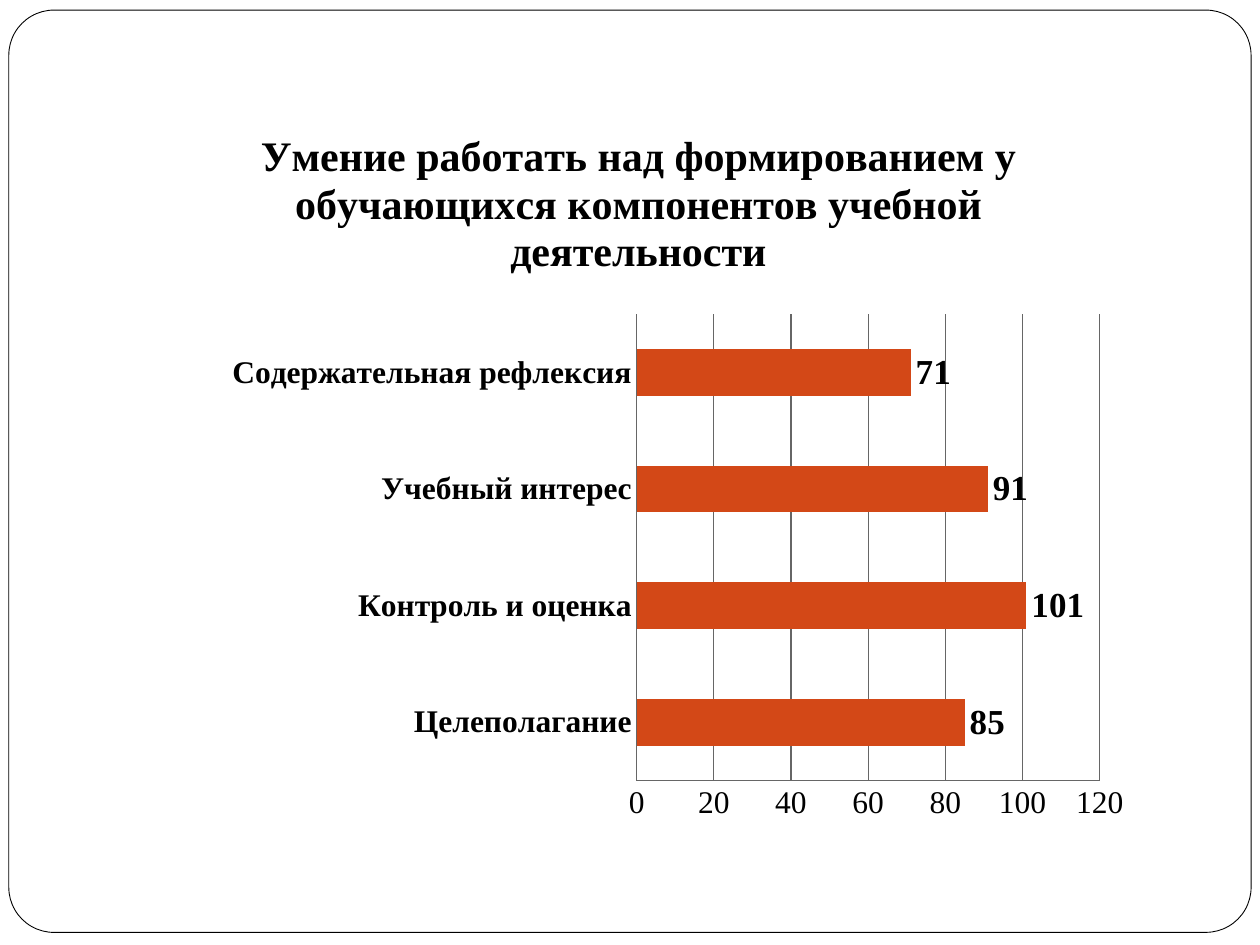
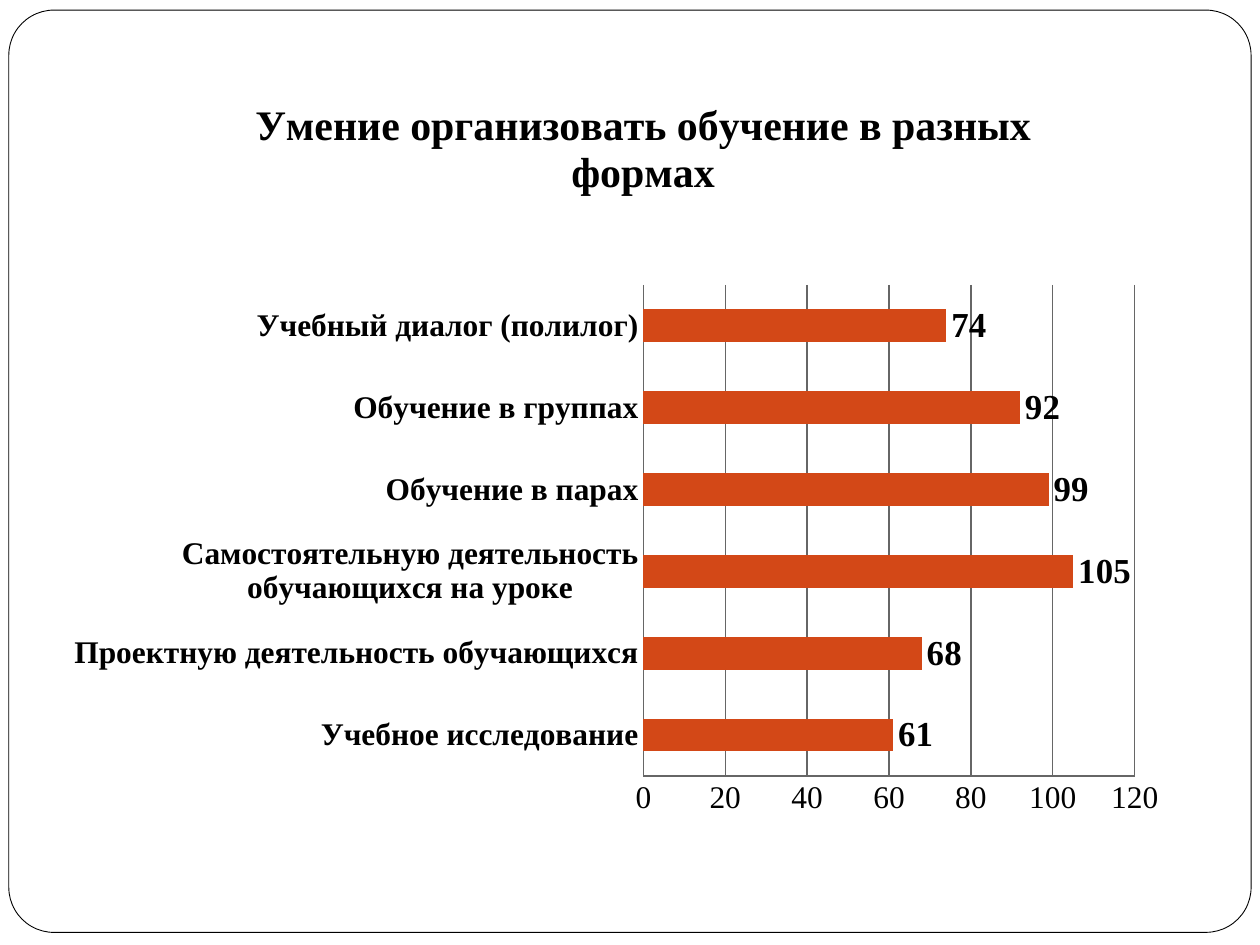
from pptx import Presentation
from pptx.chart.data import CategoryChartData as ChartData
from pptx.dml.color import RGBColor
from pptx.enum.chart import XL_CHART_TYPE as Kind, XL_LABEL_POSITION as Spot
from pptx.enum.chart import XL_TICK_MARK as Tick
from pptx.enum.shapes import MSO_SHAPE as Shape
from pptx.oxml import parse_xml
from pptx.oxml.ns import nsdecls, qn
from pptx.util import Inches, Pt

FONT = "Times New Roman"
INK, PAPER, BAR, GRID = "000000", "FFFFFF", "D34817", "666666"
PLOT = {"x": 0.501, "y": 0.273, "w": 0.436, "h": 0.611}

SLIDES = [
    {
        "title": "Умение работать над формированием у обучающихся "
                 "компонентов учебной деятельности",
        "box": (0.83, 0.84, 8.43, 6.06),
        "head": {"x": 0.14, "y": 0.02},
        "rows": [
            ("Целеполагание", 85),
            ("Контроль и оценка", 101),
            ("Учебный интерес", 91),
            ("Содержательная рефлексия", 71),
        ],
    },
    {
        "title": "Умение организовать обучение в разных формах",
        "box": (0.59, 0.52, 8.98, 6.38),
        "head": {"x": 0.15, "y": 0.03},
        "rows": [
            ("Учебное исследование", 61),
            ("Проектную деятельность обучающихся", 68),
            ("Самостоятельную деятельность обучающихся на уроке", 105),
            ("Обучение в парах", 99),
            ("Обучение в группах", 92),
            ("Учебный диалог (полилог)", 74),
        ],
    },
]


def color(text):
    return RGBColor.from_string(text)


def style(font, size, bold=False):
    font.name, font.size, font.bold = FONT, Pt(size), bold
    font.color.rgb = color(INK)


def stroke(line, ink, width):
    line.color.rgb = color(ink)
    line.width = Pt(width)


def place(node, index, spots, inner=False):
    """Give a chart part a manual layout in fractions of the chart."""
    for old in node.findall(qn("c:layout")):
        node.remove(old)
    tags = '<c:layoutTarget val="inner"/>' if inner else ""
    tags += "".join(f'<c:{k}Mode val="edge"/>' for k in "xy")
    tags += "".join(f'<c:{k} val="{v}"/>' for k, v in spots.items())
    node.insert(index, parse_xml(
        f'<c:layout {nsdecls("c")}><c:manualLayout>{tags}'
        "</c:manualLayout></c:layout>"))


def add_frame(slide):
    box = [Inches(v) for v in (0.07, 0.08, 9.86, 7.32)]
    frame = slide.shapes.add_shape(Shape.ROUNDED_RECTANGLE, *box)
    frame.adjustments[0] = 0.049
    frame.shadow.inherit = False
    frame.fill.solid()
    frame.fill.fore_color.rgb = color(PAPER)
    stroke(frame.line, INK, 0.5)


def add_bars(slide, title, box, head, rows):
    names, values = zip(*rows)
    data = ChartData()
    data.categories = names
    data.add_series("Series 1", values)
    chart = slide.shapes.add_chart(
        Kind.BAR_CLUSTERED, *[Inches(v) for v in box], data).chart
    style(chart.font, 10)
    chart.has_legend = False

    chart.has_title = True
    text = chart.chart_title.text_frame
    text.text = title
    style(text.paragraphs[0].font, 24, True)
    place(chart.chart_title._element, 1, head)
    place(chart._chartSpace.chart.plotArea, 0, PLOT, inner=True)

    for axis, bold in (chart.category_axis, True), (chart.value_axis, False):
        axis.major_tick_mark = axis.minor_tick_mark = Tick.NONE
        style(axis.tick_labels.font, 18, bold)
        stroke(axis.format.line, GRID, 0.75)
    scale = chart.value_axis
    scale.minimum_scale, scale.maximum_scale, scale.major_unit = 0, 120, 20
    scale.has_major_gridlines = True
    stroke(scale.major_gridlines.format.line, GRID, 0.75)

    plot = chart.plots[0]
    plot.gap_width = 150
    plot.vary_by_categories = False
    fill = plot.series[0].format.fill
    fill.solid()
    fill.fore_color.rgb = color(BAR)
    plot.has_data_labels = True
    labels = plot.data_labels
    labels.show_value = True
    labels.position = Spot.OUTSIDE_END
    style(labels.font, 20, True)


def main():
    deck = Presentation()
    deck.slide_width, deck.slide_height = Inches(10), Inches(7.5)
    for part in SLIDES:
        slide = deck.slides.add_slide(deck.slide_layouts[6])
        add_frame(slide)
        add_bars(slide, **part)
    deck.save("out.pptx")


if __name__ == "__main__":
    main()
